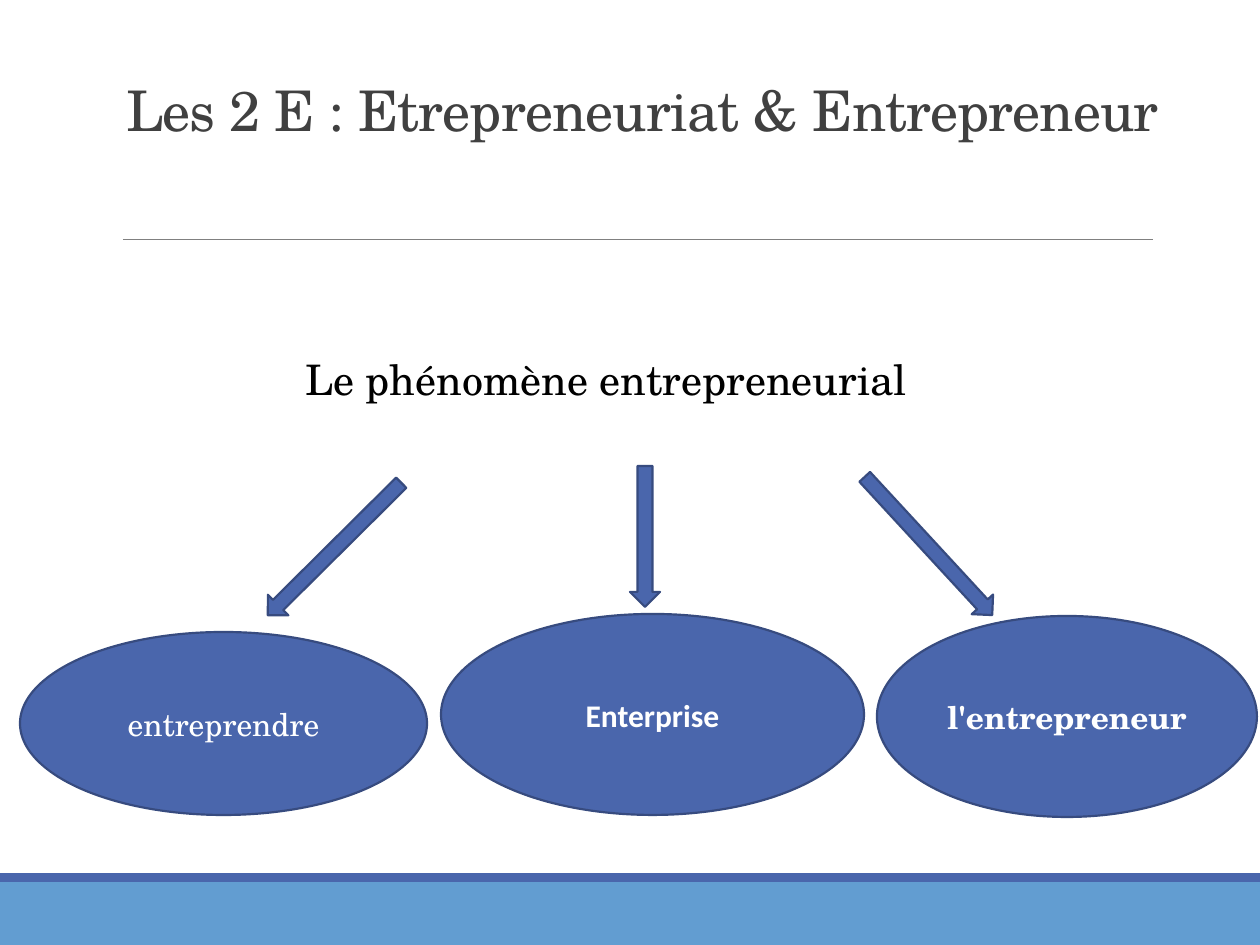
from pptx import Presentation
from pptx import util as u
from pptx.dml.color import RGBColor
from pptx.enum import shapes, text
from pptx.oxml.ns import qn
from lxml import etree

PX = 914400 / 126
SERIF = "TeX Gyre Schola"
BLUE = "4A66AC"
OUTLINE = "374B7F"
SHAPE = shapes.MSO_SHAPE


def write(box, words, size=18, font=SERIF, color="FFFFFF", bold=False,
          anchor=text.MSO_ANCHOR.MIDDLE, leading=1.0, tracking=0):
    frame = box.text_frame
    frame.word_wrap = True
    frame.auto_size = text.MSO_AUTO_SIZE.NONE
    frame.vertical_anchor = anchor
    paragraph = frame.paragraphs[0]
    paragraph.alignment = text.PP_ALIGN.CENTER
    paragraph.line_spacing = leading
    run = paragraph.add_run()
    run.text = words
    run.font.size = u.Pt(size)
    run.font.name = font
    run.font.bold = bold
    run.font.color.rgb = RGBColor.from_string(color)
    if tracking:
        run.font._element.set("spc", str(tracking))


def draw(kind, area, fill, outline=None, rotation=0):
    shape = slide.shapes.add_shape(kind, *[round(n * PX) for n in area])
    shape.shadow.inherit = False
    shape.fill.solid()
    shape.fill.fore_color.rgb = RGBColor.from_string(fill)
    if outline:
        shape.line.color.rgb = RGBColor.from_string(outline)
        shape.line.width = u.Pt(1.25)
    else:
        shape.line.fill.background()
    shape.rotation = rotation
    return shape


deck = Presentation()
deck.slide_width = round(1260 * PX)
deck.slide_height = round(945 * PX)
slide = deck.slides.add_slide(deck.slide_layouts[5])

draw(SHAPE.RECTANGLE, (0, 882, 1260, 63), "629DD1")
draw(SHAPE.RECTANGLE, (0, 873, 1260, 9), BLUE)

rule = slide.shapes.add_connector(
    shapes.MSO_CONNECTOR.STRAIGHT, *[round(n * PX) for n in (123, 239, 1153, 239)])
rule.line.color.rgb = RGBColor.from_string("808080")
rule.line.width = u.Pt(0.5)
etree.SubElement(rule._element.spPr, qn("a:effectLst"))

title = slide.shapes.title
title.left, title.top, title.width, title.height = [
    round(n * PX) for n in (87, 58, 1111, 91)]
write(title, "Les 2 E : Etrepreneuriat & Entrepreneur", size=32, color="404040",
      anchor=text.MSO_ANCHOR.BOTTOM, leading=0.85, tracking=-50)

phenomenon = slide.shapes.add_textbox(*[round(n * PX) for n in (206, 348, 800, 62)])
write(phenomenon, "Le phénomène entrepreneurial", size=24, color="000000")

for words, area, font, bold in (
    ("entreprendre", (20, 632, 407, 183), SERIF, False),
    ("Enterprise", (441, 614, 423, 201), "Calibri", True),
    ("l'entrepreneur", (877, 616, 380, 201), SERIF, True),
):
    theme = draw(SHAPE.OVAL, area, BLUE, OUTLINE)
    write(theme, words, font=font, bold=bold)

for area, rotation in (
    ((630, 466, 30, 141), 0),
    ((914, 452, 29, 188), 317.3),
    ((320, 455, 29, 188), 45.2),
):
    draw(SHAPE.DOWN_ARROW, area, BLUE, OUTLINE, rotation)

deck.save("out.pptx")
